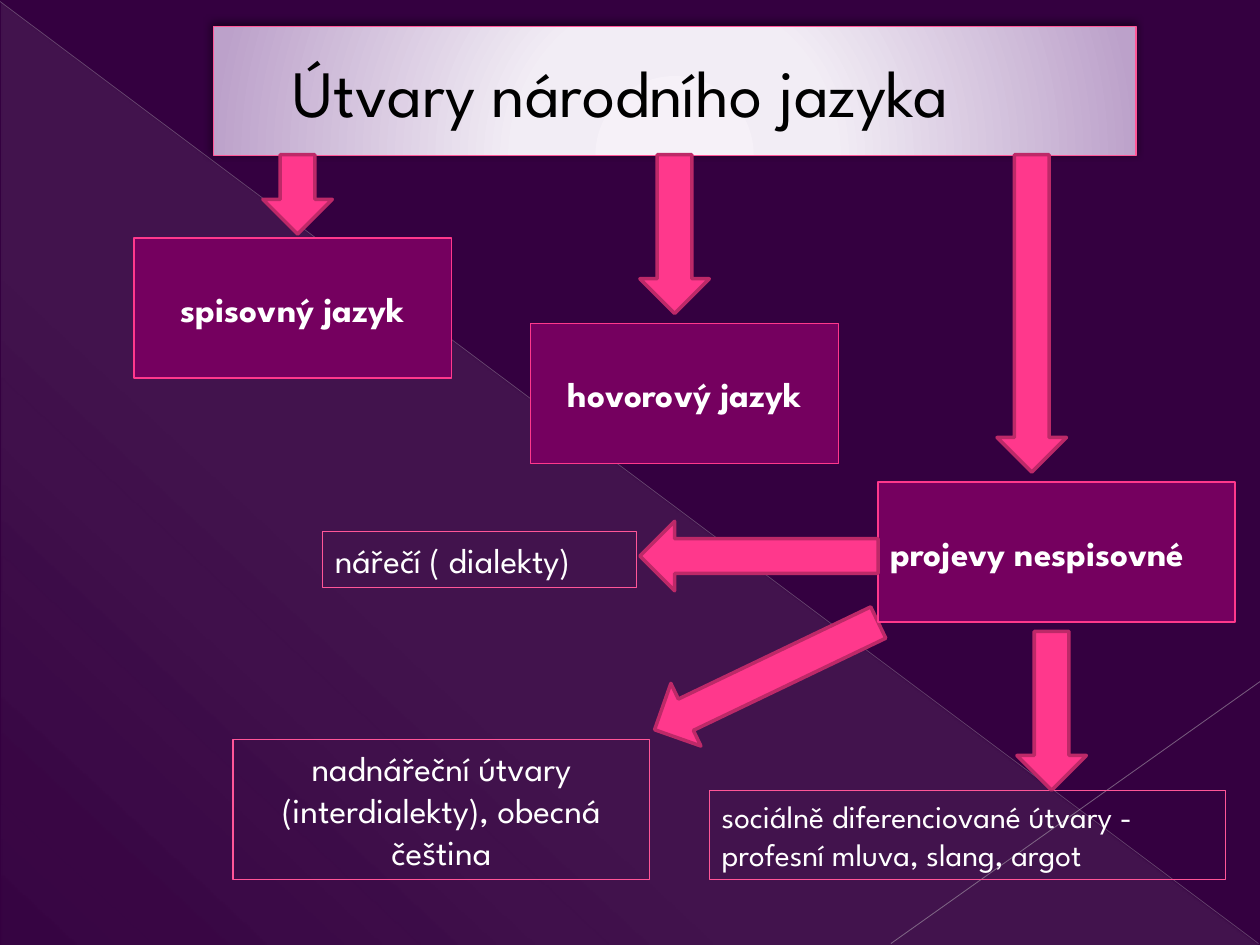
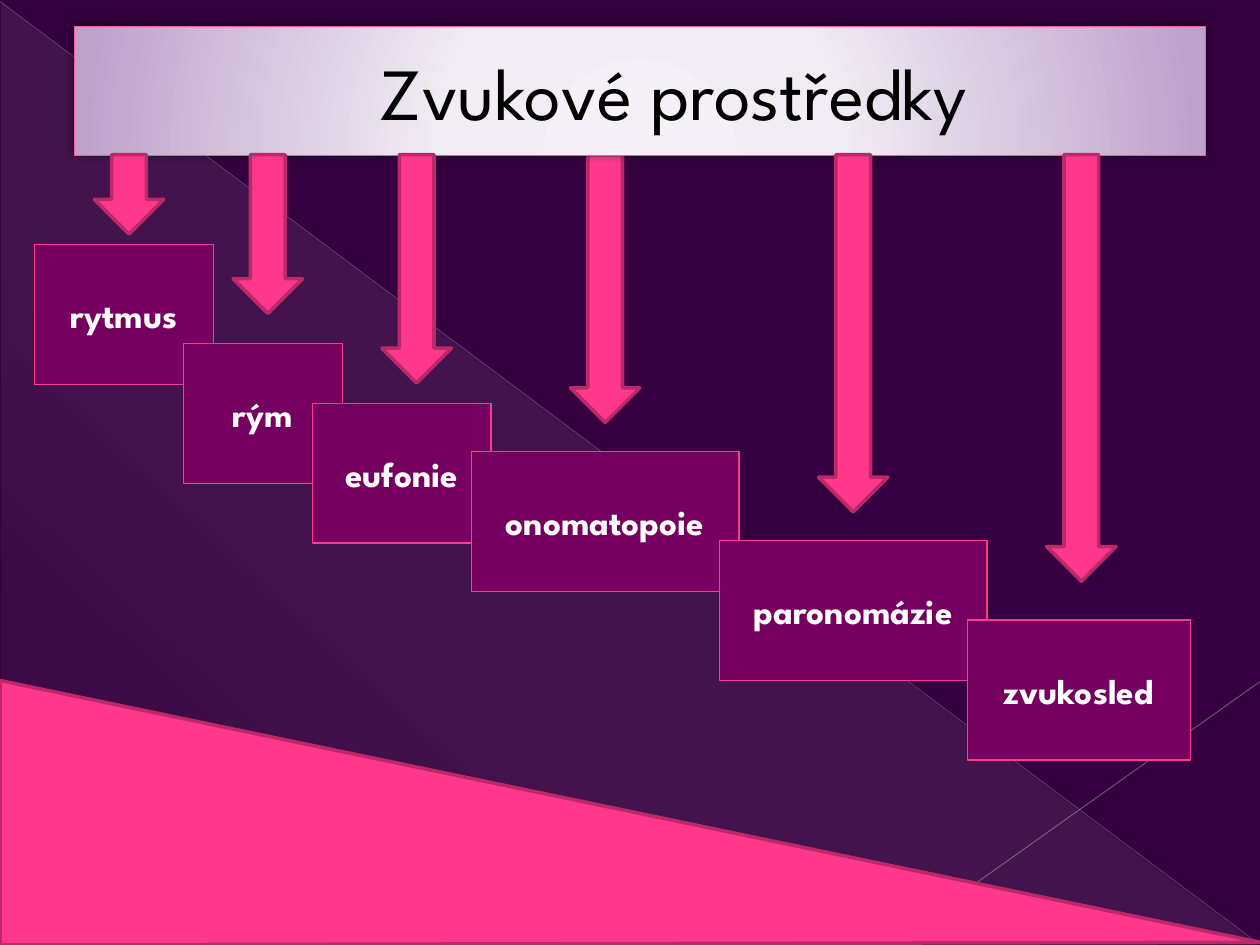
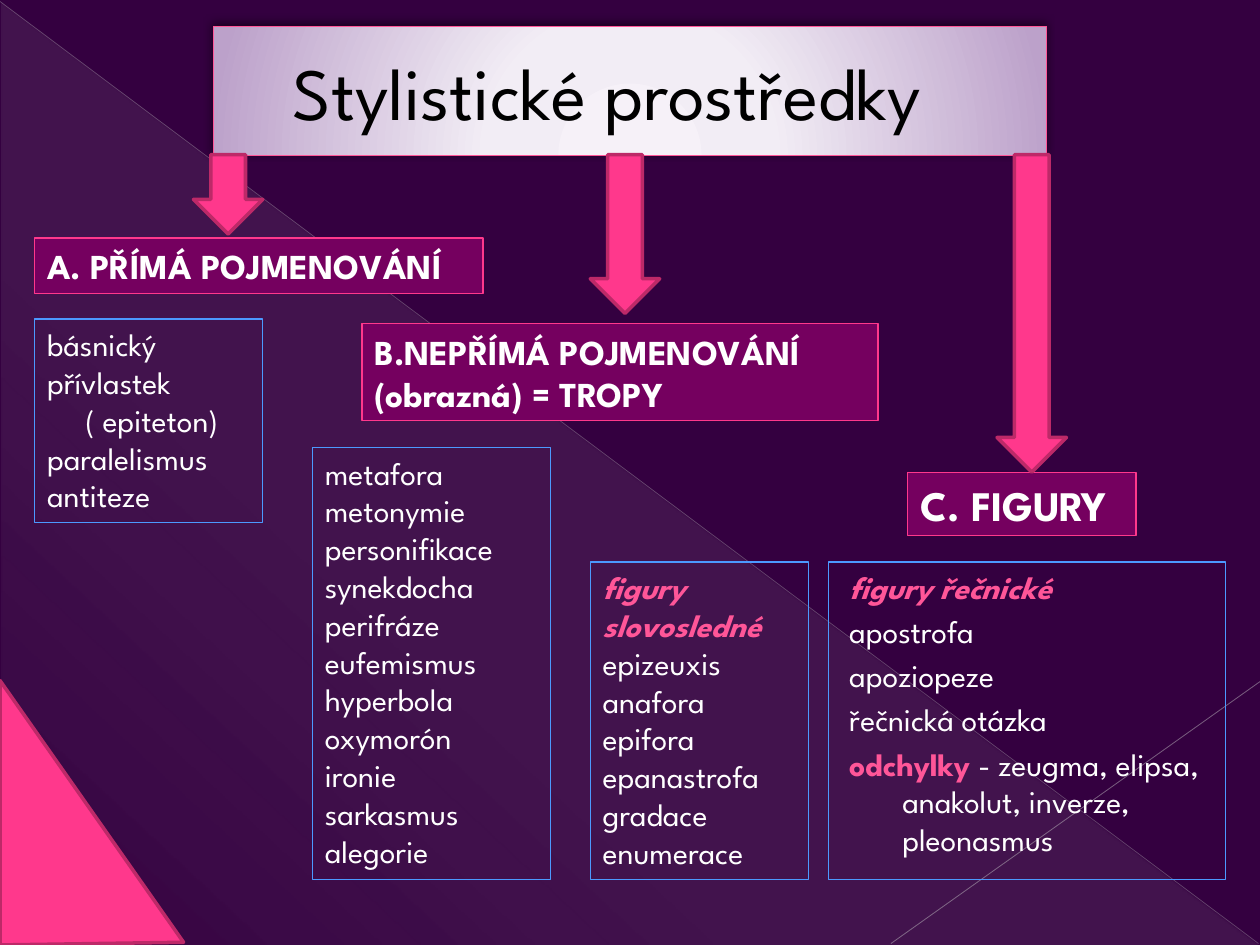
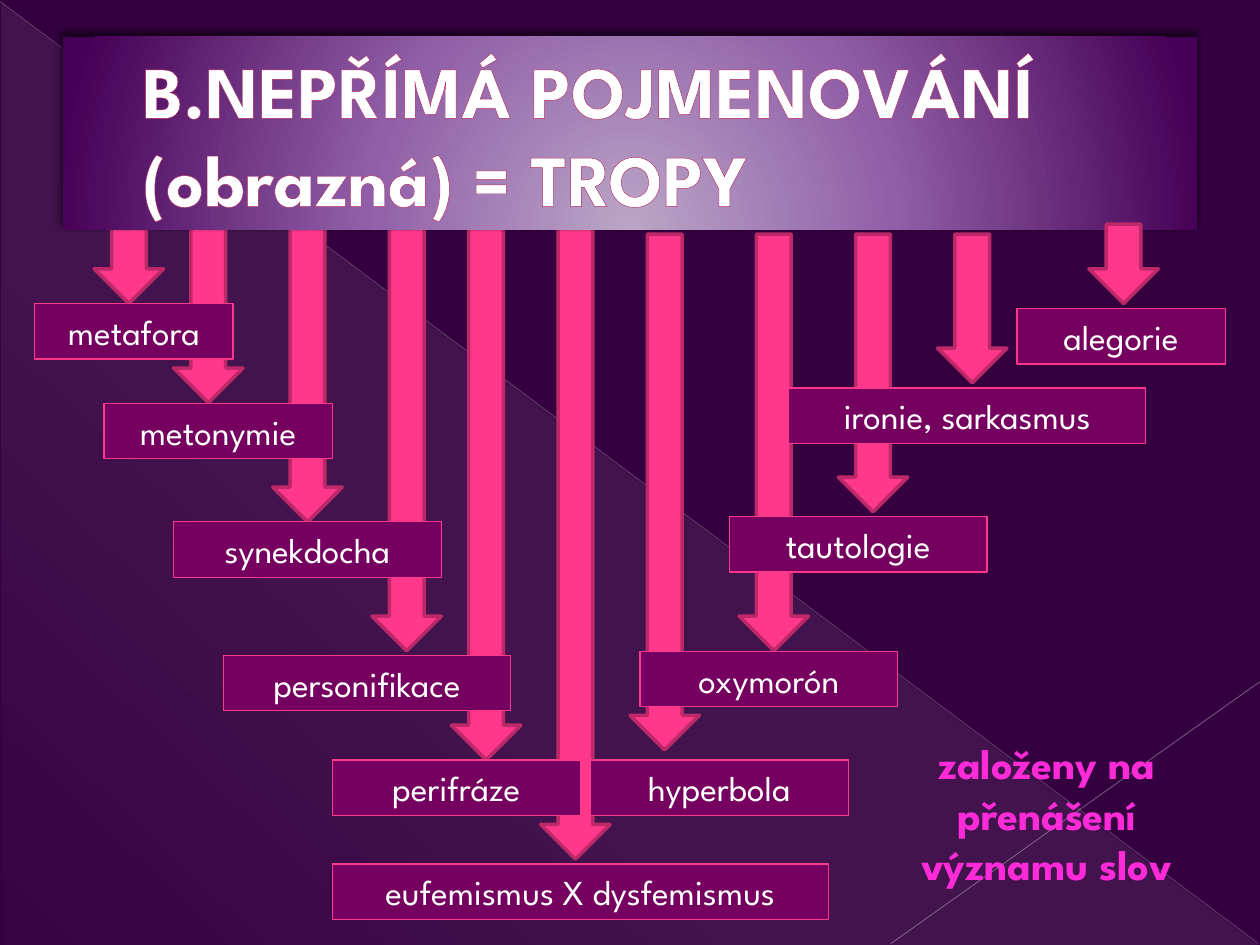
from dataclasses import dataclass, replace
from typing import Optional

from lxml.etree import SubElement
from pptx import Presentation
from pptx.dml.color import RGBColor
from pptx.enum.shapes import MSO_CONNECTOR, MSO_SHAPE
from pptx.enum.text import MSO_ANCHOR, PP_ALIGN
from pptx.oxml import parse_xml
from pptx.oxml.ns import nsdecls, qn
from pptx.util import Cm, Pt

FONT = "League Spartan"
NIGHT = RGBColor(0x34, 0x00, 0x40)
PLUM = RGBColor(0x75, 0x00, 0x5F)
PINK = RGBColor(0xFF, 0x38, 0x8C)
ROSE = RGBColor(0xFF, 0x56, 0x98)
RASPBERRY = RGBColor(0xBD, 0x29, 0x68)
WINE = RGBColor(0xB1, 0x27, 0x61)
MAGENTA = RGBColor(0xFF, 0x2B, 0xD8)
BLUE = RGBColor(0x4C, 0x99, 0xFF)
WHITE = RGBColor(0xFF, 0xFF, 0xFF)
BLACK = RGBColor(0x00, 0x00, 0x00)
SILVER = RGBColor(0xBF, 0xBF, 0xBF)
GREY = RGBColor(0xC6, 0xC6, 0xC6)

WIDTH, HEIGHT = 25.4, 19.05
ARROW_WIDTH = 1.4
WEDGE_HEIGHT = 5.33
ARROW_TOP = 3.12
TILE_HEIGHT = 2.82
LABEL_HEIGHT = 1.12
LIST_BOTTOM = 17.73

CIRCLE = '<a:path path="circle"><a:fillToRect l="50000" t="155000" r="50000" b="-55000"/></a:path>'
DIAGONAL = '<a:lin ang="7980000" scaled="0"/>'
VEIL_STOPS = [(0, "D2D2D2", 10), (70, "D2D2D2", 8), (100, "D2D2D2", 1)]


@dataclass
class Line:
    text: str
    lead: str = ""
    heading: bool = False
    indent: float = 0


@dataclass
class Style:
    fill: Optional[RGBColor] = None
    line: Optional[RGBColor] = None
    color: RGBColor = WHITE
    size: float = 20
    bold: bool = False
    align: PP_ALIGN = PP_ALIGN.LEFT
    anchor: MSO_ANCHOR = MSO_ANCHOR.MIDDLE
    margin: float = 0
    hanging: float = 0
    before: float = 0


@dataclass
class TitleLook:
    stops: list
    style: Style
    shadow: tuple


HEADING = Style(PLUM, PINK, bold=True)
TILE = replace(HEADING, align=PP_ALIGN.CENTER)
LABEL = replace(TILE, bold=False)
FIGURES = replace(HEADING, size=24)
FRAME = Style(line=ROSE)
SMALL_FRAME = replace(FRAME, size=18)
CENTRED_FRAME = replace(FRAME, align=PP_ALIGN.CENTER)
LIST = Style(line=BLUE, size=18, anchor=MSO_ANCHOR.TOP)
HANGING_LIST = replace(LIST, margin=1.24, hanging=-1.07, before=3.6)
NOTE = Style(color=MAGENTA, size=24, bold=True, align=PP_ALIGN.CENTER)

TITLE = Style(line=ROSE, color=BLACK, size=42, margin=1.35)
PALE = TitleLook([(0, "F6F1F8", 100), (34, "F2EDF5", 100), (100, "BCA1CA", 100)], TITLE, (50, 5, 2))
SMALL_PALE = replace(PALE, style=replace(TITLE, size=37.8))
CENTRED_PALE = replace(PALE, style=replace(TITLE, align=PP_ALIGN.CENTER))
DEEP = TitleLook([(0, "BBA5C6", 100), (46, "905FA8", 100), (100, "460055", 100)],
                 replace(TITLE, line=None, color=WHITE, bold=True), (60, 4, 3))


def tiles(entries):
    return [(TILE, [text], left, top, width, TILE_HEIGHT) for text, left, top, width in entries]


def labels(entries):
    return [(LABEL, [text], left, top, width, LABEL_HEIGHT) for text, left, top, width in entries]


def lists(entries):
    return [(style, lines, left, top, width, LIST_BOTTOM - top) for style, lines, left, top, width in entries]


def drops(top, entries):
    return [(left, top, length, 0) for left, length in entries]


PAGES = [
    dict(
        title=("Útvary národního jazyka", SMALL_PALE, 4.3, 0.53, 18.6, 2.6),
        back_arrows=[(14.75, 11.13, 5, 64.4)],
        boxes=tiles([
            ("spisovný jazyk", 2.7, 4.8, 6.4),
            ("hovorový jazyk", 10.7, 6.52, 6.2),
        ]) + [
            (HEADING, ["projevy nespisovné"], 17.7, 9.72, 7.2, TILE_HEIGHT),
            (SMALL_FRAME, ["sociálně diferenciované útvary - profesní mluva, slang, argot"], 14.3, 15.93, 10.4, 1.8),
            (FRAME, ["nářečí ( dialekty)"], 6.5, 10.72, 6.33, LABEL_HEIGHT),
            (CENTRED_FRAME, ["nadnářeční útvary (interdialekty), obecná čeština"], 4.7, 14.91, 8.4, TILE_HEIGHT),
        ],
        arrows=drops(ARROW_TOP, [(5.3, 1.6), (12.9, 3.2), (20.1, 6.4)])
        + [(14.6, 8.81, 4.8, 90), (20.5, 12.73, 3.2, 0)],
    ),
    dict(
        title=("Zvukové prostředky", CENTRED_PALE, 1.5, 0.53, 22.8, 2.6),
        back_arrows=drops(ARROW_TOP, [(11.5, 5.4)]),
        boxes=tiles([
            ("rytmus", 0.7, 4.93, 3.6),
            ("rým", 3.7, 6.93, 3.2),
            ("eufonie", 6.3, 8.13, 3.6),
            ("onomatopoie", 9.5, 9.1, 5.4),
            ("paronomázie", 14.5, 10.9, 5.4),
            ("zvukosled", 19.5, 12.5, 4.5),
        ]),
        arrows=drops(ARROW_TOP, [(1.9, 1.6), (4.7, 3.2), (7.7, 4.6), (16.5, 7.2), (21.1, 8.6)]),
        wedge=25.4,
    ),
    dict(
        title=("Stylistické prostředky", PALE, 4.3, 0.53, 16.8, 2.6),
        boxes=[
            (HEADING, ["A. PŘÍMÁ POJMENOVÁNÍ"], 0.7, 4.8, 9.04, LABEL_HEIGHT),
            (HEADING, ["B.NEPŘÍMÁ POJMENOVÁNÍ (obrazná) = TROPY"], 7.3, 6.52, 10.4, 1.96),
            (FIGURES, ["C. FIGURY"], 18.3, 9.53, 4.6, 1.27),
            (LIST, ["básnický přívlastek", Line("( epiteton)", indent=0.77), "paralelismus", "antiteze"],
             0.7, 6.43, 4.6, 4.11),
        ] + lists([
            (LIST, ["metafora", "metonymie", "personifikace", "synekdocha", "perifráze", "eufemismus",
                    "hyperbola", "oxymorón", "ironie", "sarkasmus", "alegorie"], 6.3, 9.02, 4.8),
            (LIST, [Line("figury", heading=True), Line("slovosledné", heading=True), "epizeuxis", "anafora",
                    "epifora", "epanastrofa", "gradace", "enumerace"], 11.9, 11.33, 4.4),
            (HANGING_LIST, [Line("figury řečnické", heading=True), "apostrofa", "apoziopeze", "řečnická otázka",
                            Line("- zeugma, elipsa, anakolut, inverze, pleonasmus", lead="odchylky ")],
             16.7, 11.33, 8),
        ]),
        arrows=drops(ARROW_TOP, [(3.9, 1.6), (11.9, 3.2), (20.1, 6.4)]),
        wedge=3.7,
    ),
    dict(
        title=("B.NEPŘÍMÁ POJMENOVÁNÍ (obrazná) = TROPY", DEEP, 1.27, 0.74, 22.86, 3.89),
        back_arrows=drops(4.52, [(1.9, 1.6), (3.5, 3.6), (5.5, 6), (7.5, 8.6), (9.1, 10.8), (10.9, 12.8)])
        + drops(4.72, [(12.7, 10.4), (14.9, 8.4), (16.9, 5.6), (18.9, 3)]),
        boxes=labels([
            ("metafora", 0.7, 6.12, 4),
            ("metonymie", 2.1, 8.13, 4.6),
            ("synekdocha", 3.5, 10.52, 5.4),
            ("personifikace", 4.5, 13.21, 5.8),
            ("perifráze", 6.7, 15.32, 5),
            ("eufemismus X dysfemismus", 6.7, 17.42, 10),
            ("hyperbola", 11.9, 15.32, 5.2),
            ("oxymorón", 12.9, 13.13, 5.2),
            ("tautologie", 14.7, 10.41, 5.2),
            ("ironie, sarkasmus", 15.9, 7.82, 7.2),
            ("alegorie", 20.5, 6.22, 4.2),
        ]) + [(NOTE, ["založeny na přenášení významu slov"], 17.9, 14.73, 6.4, 3.33)],
        arrows=drops(4.52, [(21.95, 1.6)]),
    ),
]


def add_alpha(color_element, percent):
    SubElement(color_element, qn("a:alpha")).set("val", str(percent * 1000))


def paint(shape, fill, line, weight=0.75):
    shape.shadow.inherit = False
    if fill is None:
        shape.fill.background()
    else:
        shape.fill.solid()
        shape.fill.fore_color.rgb = fill
    if line is None:
        shape.line.fill.background()
    else:
        shape.line.color.rgb = line
        shape.line.width = Pt(weight)


def paint_gradient(shape, stops, direction):
    marks = "".join(
        f'<a:gs pos="{place * 1000}"><a:srgbClr val="{color}"><a:alpha val="{alpha * 1000}"/></a:srgbClr></a:gs>'
        for place, color, alpha in stops)
    gradient = parse_xml(f'<a:gradFill {nsdecls("a")} rotWithShape="1"><a:gsLst>{marks}</a:gsLst>{direction}</a:gradFill>')
    properties = shape._element.spPr
    properties.replace(properties.find(qn("a:noFill")), gradient)


def cast_shadow(shape, opacity, blur, distance):
    effects = shape._element.spPr.find(qn("a:effectLst"))
    effects.append(parse_xml(
        f'<a:outerShdw {nsdecls("a")} blurRad="{Pt(blur)}" dist="{Pt(distance)}" dir="14700000" rotWithShape="0">'
        f'<a:srgbClr val="{BLACK}"><a:alpha val="{opacity * 1000}"/></a:srgbClr></a:outerShdw>'))


def write(box, lines, style):
    frame = box.text_frame
    frame.word_wrap = True
    frame.vertical_anchor = style.anchor
    for index, entry in enumerate(lines):
        line = Line(entry) if isinstance(entry, str) else entry
        paragraph = frame.add_paragraph() if index else frame.paragraphs[0]
        paragraph.alignment = style.align
        paragraph.space_before = Pt(style.before)
        layout = paragraph._p.get_or_add_pPr()
        layout.set("marL", str(Cm(style.margin + line.indent)))
        layout.set("indent", str(Cm(style.hanging)))
        font = paragraph.font
        font.name, font.size = FONT, Pt(style.size)
        font.bold = style.bold or line.heading
        font.italic = line.heading
        font.color.rgb = ROSE if line.heading else style.color
        if line.lead:
            span = paragraph.add_run()
            span.text = line.lead
            span.font.bold = True
            span.font.color.rgb = ROSE
        paragraph.add_run().text = line.text


def add_shape(page, kind, left, top, width, height):
    return page.shapes.add_shape(kind, Cm(left), Cm(top), Cm(width), Cm(height))


def add_box(page, style, lines, left, top, width, height):
    if style.fill is None and style.line is None:
        box = page.shapes.add_textbox(Cm(left), Cm(top), Cm(width), Cm(height))
    else:
        box = add_shape(page, MSO_SHAPE.RECTANGLE, left, top, width, height)
        paint(box, style.fill, style.line)
    write(box, lines, style)


def add_title(page, text, look, left, top, width, height):
    box = add_shape(page, MSO_SHAPE.RECTANGLE, left, top, width, height)
    paint(box, None, look.style.line)
    paint_gradient(box, look.stops, CIRCLE)
    cast_shadow(box, *look.shadow)
    write(box, [text], look.style)
    span = box.text_frame.paragraphs[0].runs[0]
    span._r.get_or_add_rPr().insert(0, parse_xml(
        f'<a:ln {nsdecls("a")} w="6350"><a:solidFill><a:srgbClr val="{WINE}"/></a:solidFill></a:ln>'))


def add_arrow(page, left, top, length, rotation):
    arrow = add_shape(page, MSO_SHAPE.DOWN_ARROW, left, top, ARROW_WIDTH, length)
    arrow.rotation = rotation
    paint(arrow, PINK, RASPBERRY, 2)


def add_wedge(page, width):
    left = (width - WEDGE_HEIGHT) / 2
    top = HEIGHT - (WEDGE_HEIGHT + width) / 2
    wedge = add_shape(page, MSO_SHAPE.ISOSCELES_TRIANGLE, left, top, WEDGE_HEIGHT, width)
    wedge.adjustments[0] = 0.99
    wedge.rotation = 90
    paint(wedge, PINK, RASPBERRY, 2)


def add_backdrop(page):
    page.background.fill.solid()
    page.background.fill.fore_color.rgb = NIGHT
    veil = add_shape(page, MSO_SHAPE.RIGHT_TRIANGLE, 0.03, 0.05, WIDTH - 0.05, HEIGHT - 0.05)
    paint(veil, None, None)
    paint_gradient(veil, VEIL_STOPS, DIAGONAL)
    for start, end, color, weight, opacity in [
        ((0, 0.03), (25.37, 19.02), SILVER, 0.39, 35),
        ((25.4, 13.74), (17.96, 19.02), GREY, 0.47, 45),
    ]:
        ray = page.shapes.add_connector(MSO_CONNECTOR.STRAIGHT, *map(Cm, start + end))
        ray.line.color.rgb = color
        ray.line.width = Pt(weight)
        properties = ray._element.spPr
        add_alpha(next(properties.iter(qn("a:srgbClr"))), opacity)
        SubElement(properties, qn("a:effectLst"))


def main():
    deck = Presentation()
    deck.slide_width, deck.slide_height = Cm(WIDTH), Cm(HEIGHT)
    for content in PAGES:
        page = deck.slides.add_slide(deck.slide_layouts[6])
        add_backdrop(page)
        for arrow in content.get("back_arrows", []):
            add_arrow(page, *arrow)
        add_title(page, *content["title"])
        for box in content["boxes"]:
            add_box(page, *box)
        for arrow in content["arrows"]:
            add_arrow(page, *arrow)
        if "wedge" in content:
            add_wedge(page, content["wedge"])
    deck.save("out.pptx")


if __name__ == "__main__":
    main()
